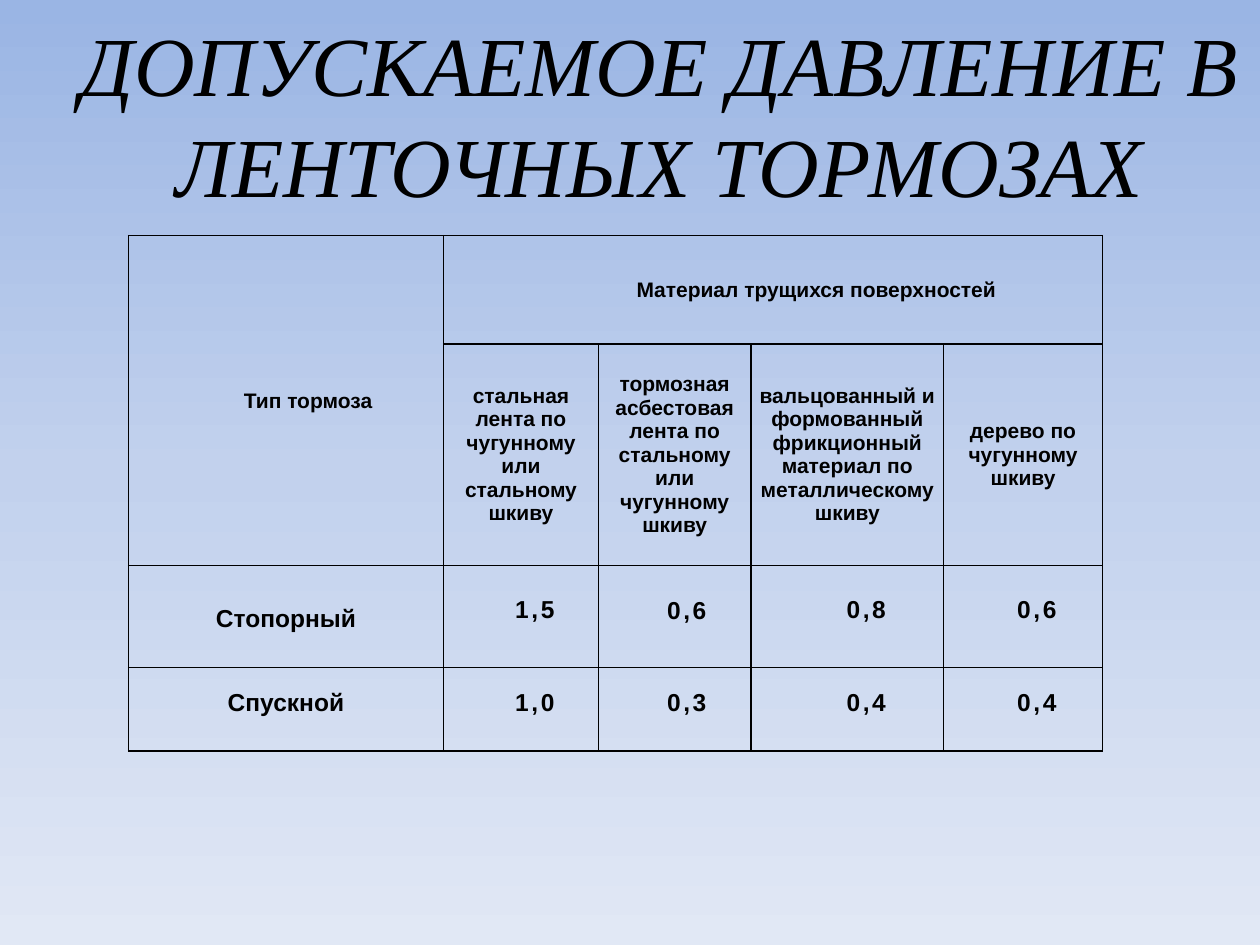
from copy import deepcopy

from lxml import etree
from pptx import Presentation
from pptx.dml.color import RGBColor
from pptx.enum import text
from pptx.oxml.ns import qn
from pptx.util import Inches, Pt

COLORS = {"ink": "000000", "top": "9AB5E4", "middle": "C2D1ED", "bottom": "E1E8F5"}
COLUMN_WIDTHS = [2.5, 1.23, 1.21, 1.53, 1.26]
ROW_HEIGHTS = [0.86, 1.76, 0.81, 0.66]
MATERIALS = [
    "стальная лента по чугунному или стальному шкиву",
    "тормозная асбестовая лента по стальному или чугунному шкиву",
    "вальцованный и формованный фрикционный материал по металлическому шкиву",
    "дерево по чугунному шкиву",
]
# Brake type, its line spacing, pressure for each material
BRAKES = [
    ("Стопорный", 1.15, ["1,5", "0,6", "0,8", "0,6"]),
    ("Спускной", Pt(8.4), ["1,0", "0,3", "0,4", "0,4"]),
]
# Indent and line spacing of the pressures in each material column
VALUE_FORMATS = [(0.22, 8.4), (0.19, 8.7), (0.3, 8.4), (0.22, 8.4)]


class SlideBuilder:
    def __init__(self, presentation):
        self.slide = presentation.slides.add_slide(presentation.slide_layouts[5])

    def color(self, name):
        return RGBColor.from_string(COLORS[name])

    def background(self, names):
        fill = self.slide.background.fill
        fill.gradient()
        fill.gradient_angle = 270
        stop_list = self.slide.element.find(".//" + qn("a:gsLst"))
        for _ in range(len(names) - len(stop_list)):
            stop_list.append(deepcopy(stop_list[-1]))
        for index, (stop, name) in enumerate(zip(fill.gradient_stops, names)):
            stop.position = index / (len(names) - 1)
            stop.color.rgb = self.color(name)

    def format_paragraph(self, paragraph, size, font="Arial"):
        paragraph.alignment = text.PP_ALIGN.CENTER
        paragraph.font.name = font
        paragraph.font.size = Pt(size)
        paragraph.font.color.rgb = self.color("ink")

    def title(self, words, left, top, width, height):
        title = self.slide.shapes.title
        title.left, title.top = Inches(left), Inches(top)
        title.width, title.height = Inches(width), Inches(height)
        frame = title.text_frame
        frame.text = words
        frame.word_wrap = True
        frame.auto_size = text.MSO_AUTO_SIZE.NONE
        frame.vertical_anchor = text.MSO_ANCHOR.MIDDLE
        self.format_paragraph(frame.paragraphs[0], 48, "Times New Roman")
        frame.paragraphs[0].font.italic = True

    def table(self, left, top, widths, heights):
        table = self.slide.shapes.add_table(
            len(heights), len(widths), Inches(left), Inches(top),
            Inches(sum(widths)), Inches(sum(heights))).table
        table.first_row = table.horz_banding = False
        for column, width in zip(table.columns, widths):
            column.width = Inches(width)
        for row, height in zip(table.rows, heights):
            row.height = Inches(height)
        for cell in table.iter_cells():
            cell.fill.background()
            self.borders(cell)
        return table

    def borders(self, cell):
        properties = cell._tc.get_or_add_tcPr()
        for index, side in enumerate(("lnL", "lnR", "lnT", "lnB")):
            line = etree.Element(qn("a:" + side), w=str(Pt(1)))
            fill = etree.SubElement(line, qn("a:solidFill"))
            etree.SubElement(fill, qn("a:srgbClr"), val=COLORS["ink"])
            properties.insert(index, line)

    def cell(self, cell, words, size=12, indent=0, line_spacing=None, tracking=0):
        cell.text = words
        cell.vertical_anchor = text.MSO_ANCHOR.MIDDLE
        cell.margin_left = cell.margin_right = Inches(0.03)
        cell.margin_top = cell.margin_bottom = 0
        paragraph = cell.text_frame.paragraphs[0]
        self.format_paragraph(paragraph, size)
        paragraph.font.bold = True
        paragraph.line_spacing = line_spacing
        if indent:
            paragraph._p.get_or_add_pPr().set("marL", str(Inches(indent)))
        if tracking:
            properties = paragraph.runs[0]._r.get_or_add_rPr()
            properties.set("spc", str(int(tracking * 100)))


def main():
    presentation = Presentation()
    presentation.slide_width, presentation.slide_height = Inches(10), Inches(7.5)
    builder = SlideBuilder(presentation)
    builder.background(["top", "middle", "bottom"])
    builder.title("ДОПУСКАЕМОЕ ДАВЛЕНИЕ В ЛЕНТОЧНЫХ ТОРМОЗАХ", 0.47, 0.16, 9.53, 1.48)

    # Table headings
    table = builder.table(1.02, 1.87, COLUMN_WIDTHS, ROW_HEIGHTS)
    table.cell(0, 0).merge(table.cell(1, 0))
    table.cell(0, 1).merge(table.cell(0, 4))
    builder.cell(table.cell(0, 0), "Тип тормоза", indent=0.35)
    builder.cell(table.cell(0, 1), "Материал трущихся поверхностей", indent=0.69)
    for column, material in enumerate(MATERIALS, 1):
        builder.cell(table.cell(1, column), material)

    # Pressures by brake type
    for row, (brake, spacing, pressures) in enumerate(BRAKES, 2):
        builder.cell(table.cell(row, 0), brake, 14, line_spacing=spacing)
        for column, (pressure, (indent, points)) in enumerate(zip(pressures, VALUE_FORMATS), 1):
            builder.cell(table.cell(row, column), pressure, 14, indent, Pt(points), 1.5)

    presentation.save("out.pptx")


if __name__ == "__main__":
    main()
